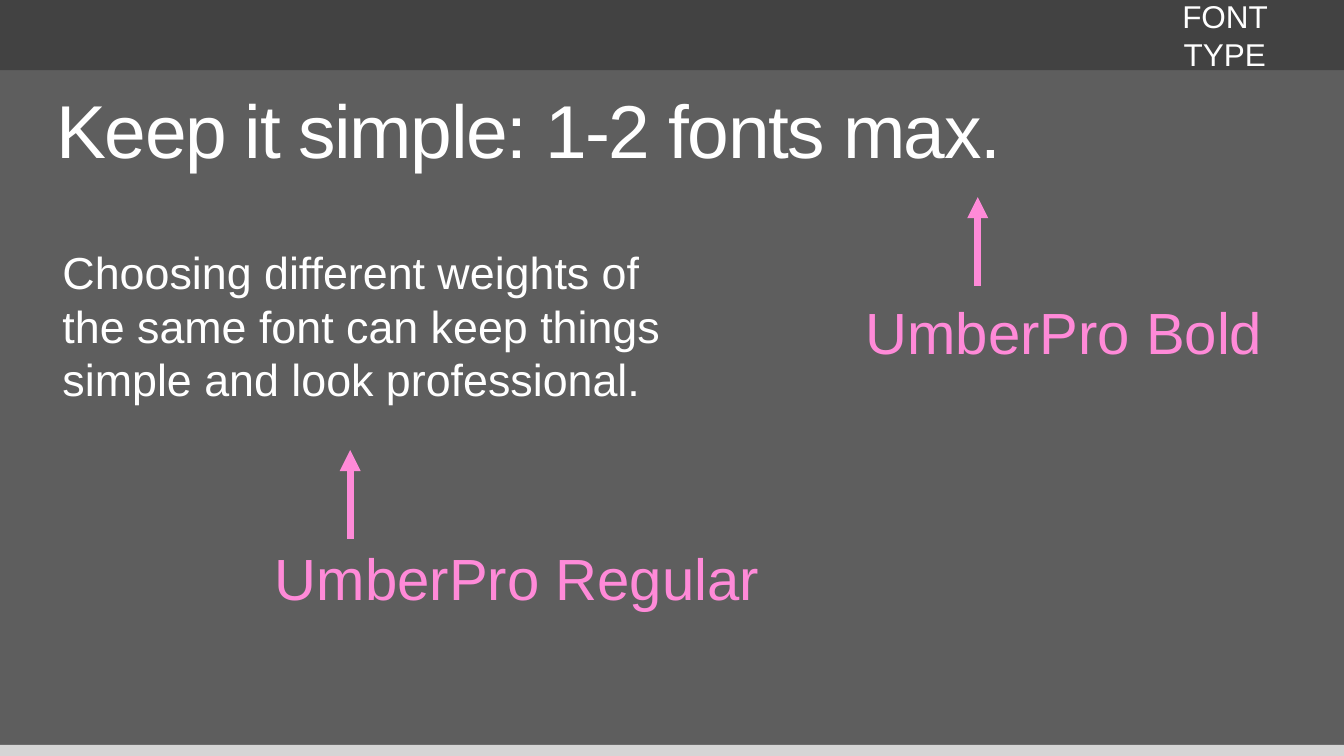
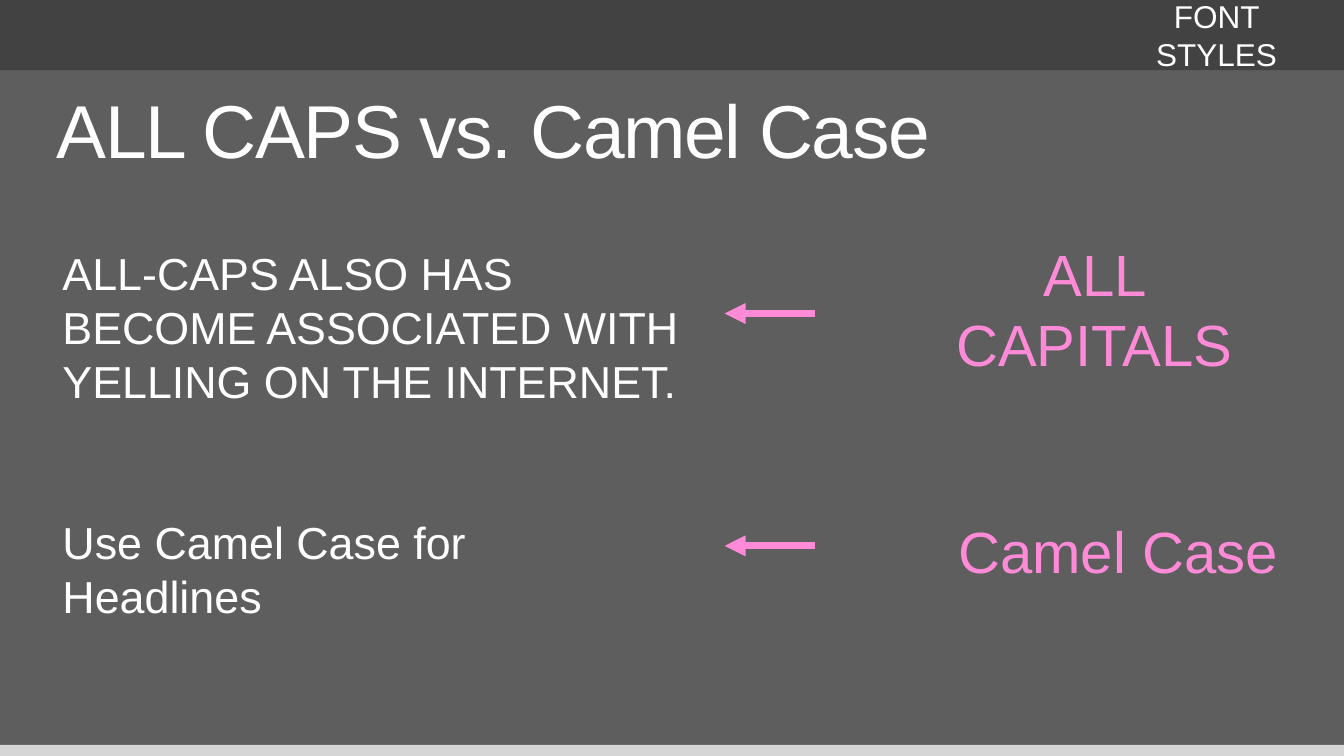
from dataclasses import dataclass

from lxml import etree
from pptx import Presentation
from pptx.dml.color import RGBColor
from pptx.enum.shapes import MSO_CONNECTOR, MSO_SHAPE
from pptx.enum.text import MSO_ANCHOR, MSO_AUTO_SIZE, PP_ALIGN
from pptx.oxml.ns import qn
from pptx.util import Cm, Pt

RECT = MSO_SHAPE.RECTANGLE
LINE = MSO_CONNECTOR.STRAIGHT
MIDDLE = MSO_ANCHOR.MIDDLE
GROW = MSO_AUTO_SIZE.SHAPE_TO_FIT_TEXT
LEFT, CENTER = PP_ALIGN.LEFT, PP_ALIGN.CENTER


@dataclass(frozen=True)
class Theme:
    # Colours
    back: str = "5E5E5E"
    head: str = "424242"
    foot: str = "D5D5D5"
    text: str = "FFFFFF"
    pink: str = "FF8AD8"
    # Type, in points
    font: str = "Arial"
    title: int = 107
    body: int = 64
    label: int = 83
    tag: int = 45
    track: float = -2.1
    stroke: int = 10
    # Lengths in cm
    wide: float = 67.74
    high: float = 38.1
    inset: float = 0.15
    margin: float = 3.0


class Deck:
    """Holds the style and the current slide."""

    def __init__(self, theme):
        self.theme = theme
        self.prs = Presentation()
        self.prs.slide_width = Cm(theme.wide)
        self.prs.slide_height = Cm(theme.high)
        self.slide = None
        fill = self.prs.slide_master.background.fill
        fill.solid()
        fill.fore_color.rgb = RGBColor.from_string(theme.back)

    def start(self):
        self.slide = self.prs.slides.add_slide(self.prs.slide_layouts[5])

    def band(self, left, top, color, rank):
        """Draw a band and move it to the back of the master."""
        band = self.slide.shapes.add_shape(
            RECT, Cm(left), Cm(top), Cm(75.9), Cm(3.53))
        band.shadow.inherit = False
        band.fill.solid()
        band.fill.fore_color.rgb = RGBColor.from_string(color)
        band.line.fill.background()
        band.element.nvSpPr.cNvPr.set("id", str(100 + rank))
        self.prs.slide_master.shapes.element.insert(2 + rank, band.element)

    def style(self, box, text, size, color, align, wrap):
        frame = box.text_frame
        frame.text = text
        frame.word_wrap = wrap
        frame.auto_size = GROW
        frame.vertical_anchor = MIDDLE
        frame.margin_left = frame.margin_right = Cm(self.theme.inset)
        frame.margin_top = frame.margin_bottom = Cm(self.theme.inset)
        para = frame.paragraphs[0]
        para.alignment = align
        para.font.name = self.theme.font
        para.font.size = Pt(size)
        para.font.bold = False
        para.font.color.rgb = RGBColor.from_string(color)
        return para

    def title(self, text, left, width, wrap):
        box = self.slide.shapes.title
        box.left, box.top = Cm(left), Cm(4.47)
        box.width, box.height = Cm(width), Cm(4.88)
        para = self.style(box, text, self.theme.title, self.theme.text,
                          LEFT, wrap)
        para.line_spacing = 0.8
        for props in box.element.iter(qn("a:defRPr")):
            props.set("spc", str(round(self.theme.track * 100)))

    def box(self, left, top, width, height):
        return self.slide.shapes.add_textbox(
            Cm(left), Cm(top), Cm(width), Cm(height))

    def body(self, text, top, width, height):
        box = self.box(self.theme.margin, top, width, height)
        self.style(box, text, self.theme.body, self.theme.text, LEFT, True)

    def label(self, text, left, top, width):
        box = self.box(left, top, width, 3.84)
        self.style(box, text, self.theme.label, self.theme.pink,
                   CENTER, False)

    def tag(self, text, left, width):
        box = self.box(left, 0.66, width, 2.18)
        self.style(box, text, self.theme.tag, self.theme.text, CENTER, False)

    def arrow(self, left, top, across=0.0, down=0.0):
        line = self.slide.shapes.add_connector(
            LINE, Cm(left), Cm(top), Cm(left + across), Cm(top + down))
        line.line.color.rgb = RGBColor.from_string(self.theme.pink)
        line.line.width = Pt(self.theme.stroke)
        stroke = line.element.spPr.find(qn("a:ln"))
        etree.SubElement(stroke, qn("a:tailEnd"), type="triangle")
        etree.SubElement(line.element.spPr, qn("a:effectLst"))


def main():
    theme = Theme()
    deck = Deck(theme)

    # Font type
    deck.start()
    deck.band(-1.42, 0, theme.head, 0)
    deck.band(-1.9, 37.54, theme.foot, 1)
    deck.title("Keep it simple: 1-2 fonts max.", 2.69, 52.3, False)
    deck.body("Choosing different weights of the same font can keep things "
              "simple and look professional.", 12.17, 33.05, 8.43)
    deck.label("UmberPro Bold", 43.18, 14.76, 20.9)
    for left, top in ((49.28, 14.4), (17.65, 27.15)):
        deck.arrow(left, top, down=-4.47)
    deck.label("UmberPro Regular", 13.59, 27.15, 24.94)
    deck.tag("FONT TYPE", 57.43, 8.61)

    # Font styles
    deck.start()
    deck.title("ALL CAPS vs. Camel Case", 2.72, 61.67, True)
    deck.body("ALL-CAPS ALSO HAS BECOME ASSOCIATED WITH YELLING ON THE "
              "INTERNET.", 12.24, 31.83, 8.43)
    deck.body("Use Camel Case for Headlines", 25.81, 26.52, 5.72)
    for top in (15.8, 27.51):
        deck.arrow(41.07, top, across=-4.55)
    deck.label("Camel Case", 47.98, 25.81, 16.76)
    deck.label("ALL CAPITALS", 45.67, 13.61, 19)
    deck.tag("FONT STYLES", 56.21, 10.21)

    deck.prs.save("out.pptx")


if __name__ == "__main__":
    main()
